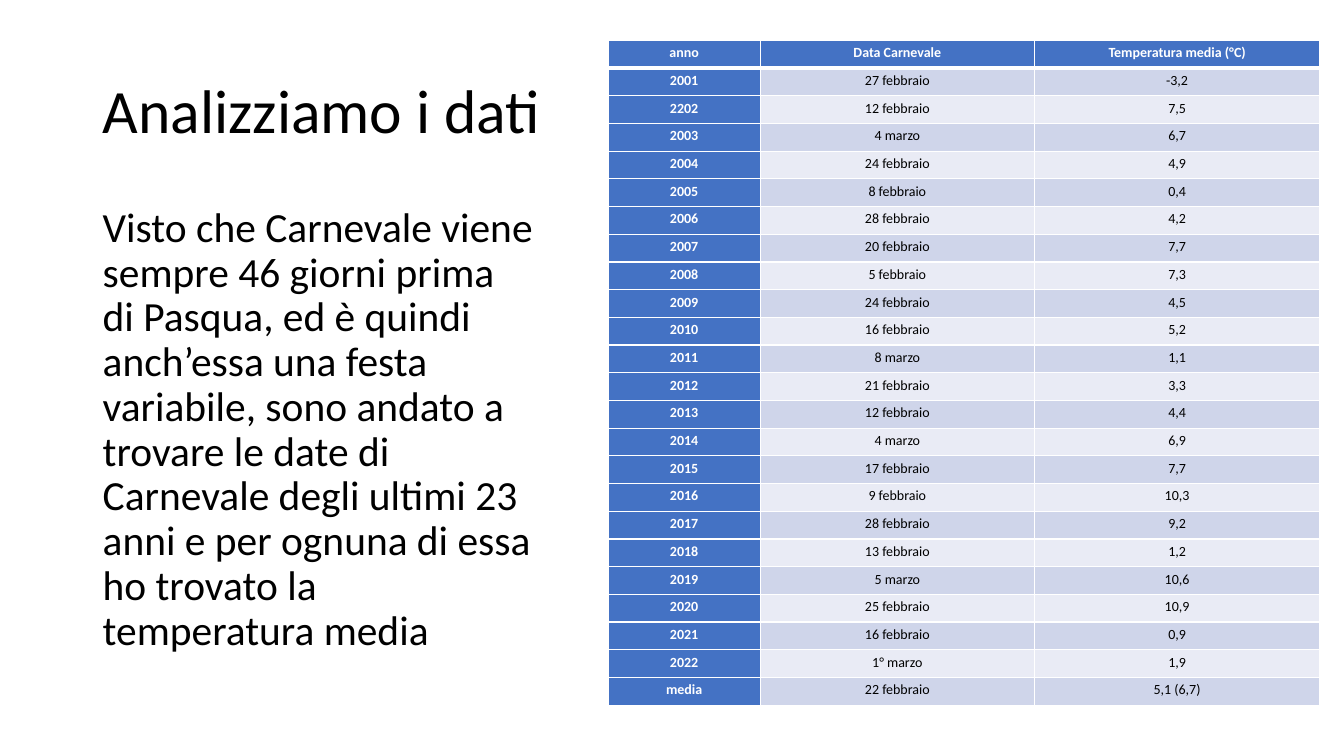
from lxml import etree
from pptx import Presentation
from pptx.dml.color import RGBColor
from pptx.enum.text import MSO_ANCHOR, MSO_AUTO_SIZE, PP_ALIGN
from pptx.oxml.ns import qn
from pptx.util import Inches, Pt

CENTER, LEFT = PP_ALIGN.CENTER, PP_ALIGN.LEFT
TOP, MIDDLE = MSO_ANCHOR.TOP, MSO_ANCHOR.MIDDLE
FIXED = MSO_AUTO_SIZE.NONE

FONT = "Calibri"
COLORS = {"text": "000000", "white": "FFFFFF", "head": "4472C4",
          "odd": "CFD5EA", "even": "E9EBF5"}

TITLE = "Analizziamo i dati"
BODY = ("Visto che Carnevale viene sempre 46 giorni prima di Pasqua, ed è "
        "quindi anch’essa una festa variabile, sono andato a trovare le date "
        "di Carnevale degli ultimi 23 anni e per ognuna di essa ho trovato la "
        "temperatura media")
WIDTHS = (1.51, 2.72, 2.83)
ROWS = [
    ("anno", "Data Carnevale", "Temperatura media (°C)"),
    ("2001", "27 febbraio", "-3,2"),
    ("2202", "12 febbraio", "7,5"),
    ("2003", "4 marzo", "6,7"),
    ("2004", "24 febbraio", "4,9"),
    ("2005", "8 febbraio", "0,4"),
    ("2006", "28 febbraio", "4,2"),
    ("2007", "20 febbraio", "7,7"),
    ("2008", "5 febbraio", "7,3"),
    ("2009", "24 febbraio", "4,5"),
    ("2010", "16 febbraio", "5,2"),
    ("2011", "8 marzo", "1,1"),
    ("2012", "21 febbraio", "3,3"),
    ("2013", "12 febbraio", "4,4"),
    ("2014", "4 marzo", "6,9"),
    ("2015", "17 febbraio", "7,7"),
    ("2016", "9 febbraio", "10,3"),
    ("2017", "28 febbraio", "9,2"),
    ("2018", "13 febbraio", "1,2"),
    ("2019", "5 marzo", "10,6"),
    ("2020", "25 febbraio", "10,9"),
    ("2021", "16 febbraio", "0,9"),
    ("2022", "1° marzo", "1,9"),
    ("media", "22 febbraio", "5,1 (6,7)"),
]


def rgb(name):
    return RGBColor.from_string(COLORS[name])


def write(frame, text, size, color="text", bold=False, align=LEFT, space=0.9):
    frame.text = text
    para = frame.paragraphs[0]
    para.alignment = align
    para.line_spacing = space
    para.space_before = Pt(0)
    font = para.runs[0].font
    font.name, font.size, font.bold = FONT, Pt(size), bold
    font.color.rgb = rgb(color)


def edge(cell, sides):
    """Draw white borders; sides maps a border tag to its width in points."""
    props = cell._tc.get_or_add_tcPr()
    for spot, (tag, width) in enumerate(sides.items()):
        line = etree.Element(qn("a:" + tag), w=str(Pt(width)))
        fill = etree.SubElement(line, qn("a:solidFill"))
        etree.SubElement(fill, qn("a:srgbClr"), val=COLORS["white"])
        props.insert(spot, line)


def add_title(slide, left, top, width, height):
    title = slide.shapes.title
    title.left, title.top = Inches(left), Inches(top)
    title.width, title.height = Inches(width), Inches(height)
    frame = title.text_frame
    frame.vertical_anchor = MIDDLE
    frame.auto_size = FIXED
    write(frame, TITLE, 44)


def add_body(slide, left, top, width, height):
    box = slide.shapes.add_textbox(Inches(left), Inches(top),
                                   Inches(width), Inches(height))
    frame = box.text_frame
    frame.word_wrap = True
    frame.vertical_anchor = TOP
    write(frame, BODY, 29.6)


def add_data(slide, left, top, width, height):
    table = slide.shapes.add_table(len(ROWS), len(WIDTHS), Inches(left),
                                   Inches(top), Inches(width),
                                   Inches(height)).table
    table.first_col = True
    for col, share in zip(table.columns, WIDTHS):
        col.width = Inches(width * share / sum(WIDTHS))
    for r, row in enumerate(ROWS):
        table.rows[r].height = Inches(height / len(ROWS))
        for c, text in enumerate(row):
            cell = table.cell(r, c)
            head = r == 0 or c == 0
            cell.margin_left = cell.margin_right = Inches(0.07)
            cell.margin_top, cell.margin_bottom = Inches(0.03), Inches(0)
            write(cell.text_frame, text, 10, "white" if head else "text",
                  head, CENTER, 1.07)
            cell.fill.solid()
            band = "odd" if r % 2 else "even"
            cell.fill.fore_color.rgb = rgb("head" if head else band)
            # A thicker rule parts the header from the data
            edge(cell, {"lnL": 1, "lnR": 1, "lnT": 3 if r == 1 else 1,
                        "lnB": 3 if r == 0 else 1})


def main():
    deck = Presentation()
    deck.slide_width, deck.slide_height = Inches(13.33), Inches(7.5)
    slide = deck.slides.add_slide(deck.slide_layouts[5])
    add_title(slide, 0.92, 0.4, 4.94, 1.45)
    add_body(slide, 0.92, 2, 4.49, 4.76)
    add_data(slide, 6.03, 0.4, 7.06, 6.6)
    deck.save("out.pptx")


if __name__ == "__main__":
    main()
